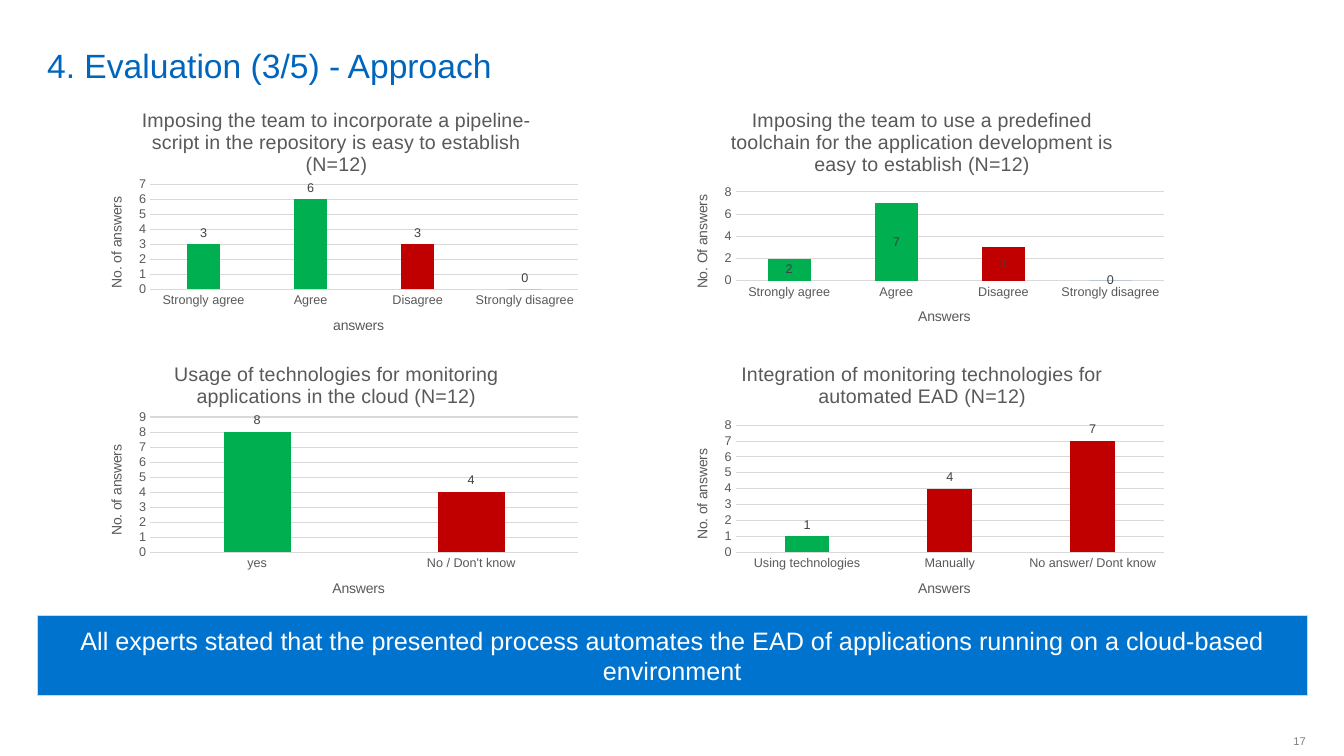
from lxml import etree
from pptx import Presentation
from pptx.chart.data import CategoryChartData
from pptx.dml.color import RGBColor
from pptx.enum.chart import XL_CHART_TYPE, XL_LABEL_POSITION, XL_TICK_MARK
from pptx.enum.shapes import MSO_SHAPE
from pptx.enum.text import MSO_ANCHOR, PP_ALIGN
from pptx.oxml import parse_xml
from pptx.oxml.ns import nsdecls
from pptx.util import Cm, Pt

TITLE_BLUE = RGBColor(0x00, 0x65, 0xBD)
BANNER_BLUE = RGBColor(0x00, 0x73, 0xCF)
SERIES_BLUE = RGBColor(0x07, 0x4F, 0xB0)
GREEN = RGBColor(0x00, 0xB0, 0x50)
RED = RGBColor(0xC0, 0x00, 0x00)
BANNER_EDGE = RGBColor(0xDA, 0xD7, 0xCB)
GRID_GREY = RGBColor(0xD9, 0xD9, 0xD9)
TEXT_GREY = RGBColor(0x59, 0x59, 0x59)
LABEL_GREY = RGBColor(0x40, 0x40, 0x40)
NUMBER_GREY = RGBColor(0x80, 0x80, 0x80)
BLACK = RGBColor(0x00, 0x00, 0x00)
WHITE = RGBColor(0xFF, 0xFF, 0xFF)

LEFT, RIGHT, TOP, BOTTOM = 2.13, 16.89, 2.34, 8.74
CHART_WIDTH = 12.7
AGREEMENT = ["Strongly agree", "Agree", "Disagree", "Strongly disagree"]
CLUSTERED = {
    "type": XL_CHART_TYPE.COLUMN_CLUSTERED, "gap": 219, "overlap": -27,
    "label": XL_LABEL_POSITION.OUTSIDE_END, "unit": 1,
    "value_title": "No. of answers", "category_title": "Answers",
    "series_color": SERIES_BLUE,
}
STACKED = CLUSTERED | {
    "type": XL_CHART_TYPE.COLUMN_STACKED, "gap": 150, "overlap": 100,
    "label": XL_LABEL_POSITION.CENTER, "unit": 2,
    "value_title": "No. Of answers",
}
# "plot" holds left, top, width and height as shares of the chart box.
CHARTS = [
    STACKED | {
        "box": (RIGHT, TOP, CHART_WIDTH, 6.4), "plot": (0.13, 0.39, 0.85, 0.35),
        "title": "Imposing the team to use a predefined toolchain for the "
                 "application development is easy to establish (N=12)",
        "categories": AGREEMENT, "values": [2, 7, 3, 0],
        "colors": [GREEN, GREEN, RED], "maximum": 8,
    },
    CLUSTERED | {
        "box": (LEFT, TOP, CHART_WIDTH, 6.6), "plot": (0.13, 0.35, 0.85, 0.4),
        "title": "Imposing the team to incorporate a pipeline-script in the "
                 "repository is easy to establish (N=12)",
        "categories": AGREEMENT, "values": [3, 6, 3, 0],
        "colors": [GREEN, GREEN, RED], "maximum": 7,
        "category_title": "answers",
    },
    CLUSTERED | {
        "box": (LEFT, BOTTOM, CHART_WIDTH, 6.81), "plot": (0.13, 0.26, 0.85, 0.5),
        "title": "Usage of technologies for monitoring applications in the "
                 "cloud (N=12)",
        "categories": ["yes", "No / Don't know"], "values": [8, 4],
        "colors": [GREEN, RED], "maximum": 9,
    },
    CLUSTERED | {
        "box": (RIGHT, BOTTOM, CHART_WIDTH, 6.81), "plot": (0.13, 0.29, 0.85, 0.47),
        "title": "Integration of monitoring technologies for automated EAD (N=12)",
        "categories": ["Using technologies", "Manually", "No answer/ Dont know"],
        "values": [1, 4, 7], "colors": [GREEN, RED, RED], "maximum": 8,
        "series_color": GREEN,
    },
]


def set_font(font, size, color):
    for name, value in {"name": "Arial", "size": Pt(size), "bold": False}.items():
        setattr(font, name, value)
    font.color.rgb = color


def fill_text(shape, text, size, color, alignment, **frame_format):
    frame = shape.text_frame
    for name, value in frame_format.items():
        setattr(frame, name, value)
    paragraph = frame.paragraphs[0]
    paragraph.alignment = alignment
    run = paragraph.add_run()
    run.text = text
    set_font(run.font, size, color)


def add_heading(slide, box):
    shape = slide.shapes.add_textbox(*map(Cm, box))
    fill_text(shape, "4. Evaluation (3/5) - Approach", 24, TITLE_BLUE, PP_ALIGN.LEFT,
              word_wrap=True, vertical_anchor=MSO_ANCHOR.BOTTOM,
              margin_top=0, margin_bottom=0)


def add_slide_number(slide, box):
    shape = slide.shapes.add_textbox(*map(Cm, box))
    fill_text(shape, "17", 8, NUMBER_GREY, PP_ALIGN.RIGHT, word_wrap=False,
              vertical_anchor=MSO_ANCHOR.MIDDLE, margin_right=0)


def add_banner(slide, box):
    shape = slide.shapes.add_shape(MSO_SHAPE.RECTANGLE, *map(Cm, box))
    shape.shadow.inherit = False
    shape.fill.solid()
    shape.fill.fore_color.rgb = BANNER_BLUE
    shape.line.color.rgb = BANNER_EDGE
    shape.line.width = Pt(0.75)
    fill_text(shape, "All experts stated that the presented process automates the EAD "
              "of applications running on a cloud-based environment", 18, WHITE,
              PP_ALIGN.CENTER, word_wrap=True, vertical_anchor=MSO_ANCHOR.MIDDLE)


def set_chart_title(title, text, size):
    title.text_frame.text = text
    set_font(title.text_frame.paragraphs[0].runs[0].font, size, TEXT_GREY)


def style_axis(axis, title):
    axis.major_tick_mark = axis.minor_tick_mark = XL_TICK_MARK.NONE
    set_font(axis.tick_labels.font, 9, TEXT_GREY)
    set_chart_title(axis.axis_title, title, 10)


def style_line(line):
    line.color.rgb = GRID_GREY
    line.width = Pt(0.75)


def place_plot_area(chart, shares):
    """Fix the inner plot area at shares of the chart box."""
    plot_area = chart.plots[0]._element.getparent()
    for layout in plot_area.xpath("c:layout"):
        plot_area.remove(layout)
    layout = parse_xml(f'<c:layout {nsdecls("c")}><c:manualLayout/></c:layout>')
    namespace = etree.QName(layout).namespace
    settings = [("layoutTarget", "inner"), ("xMode", "edge"), ("yMode", "edge")]
    for name, value in settings + list(zip("xywh", shares)):
        etree.SubElement(layout[0], f"{{{namespace}}}{name}").set("val", str(value))
    plot_area.insert(0, layout)


def add_survey_chart(slide, survey):
    data = CategoryChartData()
    data.categories = survey["categories"]
    data.add_series("Series 1", survey["values"])
    chart = slide.shapes.add_chart(survey["type"], *map(Cm, survey["box"]), data).chart
    set_font(chart.font, 10, BLACK)
    chart.has_legend = False
    set_chart_title(chart.chart_title, survey["title"], 14)

    style_axis(chart.category_axis, survey["category_title"])
    style_line(chart.category_axis.format.line)
    value_axis = chart.value_axis
    style_axis(value_axis, survey["value_title"])
    value_axis.format.line.fill.background()
    style_line(value_axis.major_gridlines.format.line)
    value_axis.minimum_scale = 0
    value_axis.maximum_scale = survey["maximum"]
    value_axis.major_unit = survey["unit"]

    plot = chart.plots[0]
    plot.vary_by_categories = False
    plot.gap_width = survey["gap"]
    plot.overlap = survey["overlap"]
    series = plot.series[0]
    series.format.fill.solid()
    series.format.fill.fore_color.rgb = survey["series_color"]
    for index, color in enumerate(survey["colors"]):
        fill = series.points[index].format.fill
        fill.solid()
        fill.fore_color.rgb = color
    labels = series.data_labels
    labels.show_value = True
    labels.position = survey["label"]
    set_font(labels.font, 9, LABEL_GREY)
    place_plot_area(chart, survey["plot"])


def main():
    presentation = Presentation()
    presentation.slide_width, presentation.slide_height = Cm(33.87), Cm(19.05)
    slide = presentation.slides.add_slide(presentation.slide_layouts[6])
    add_heading(slide, (0.94, 0.13, 29.41, 2.01))
    add_slide_number(slide, (32, 18.26, 0.91, 0.81))
    for survey in CHARTS:
        add_survey_chart(slide, survey)
    add_banner(slide, (0.94, 15.52, 32, 2.01))
    presentation.save("out.pptx")


if __name__ == "__main__":
    main()
